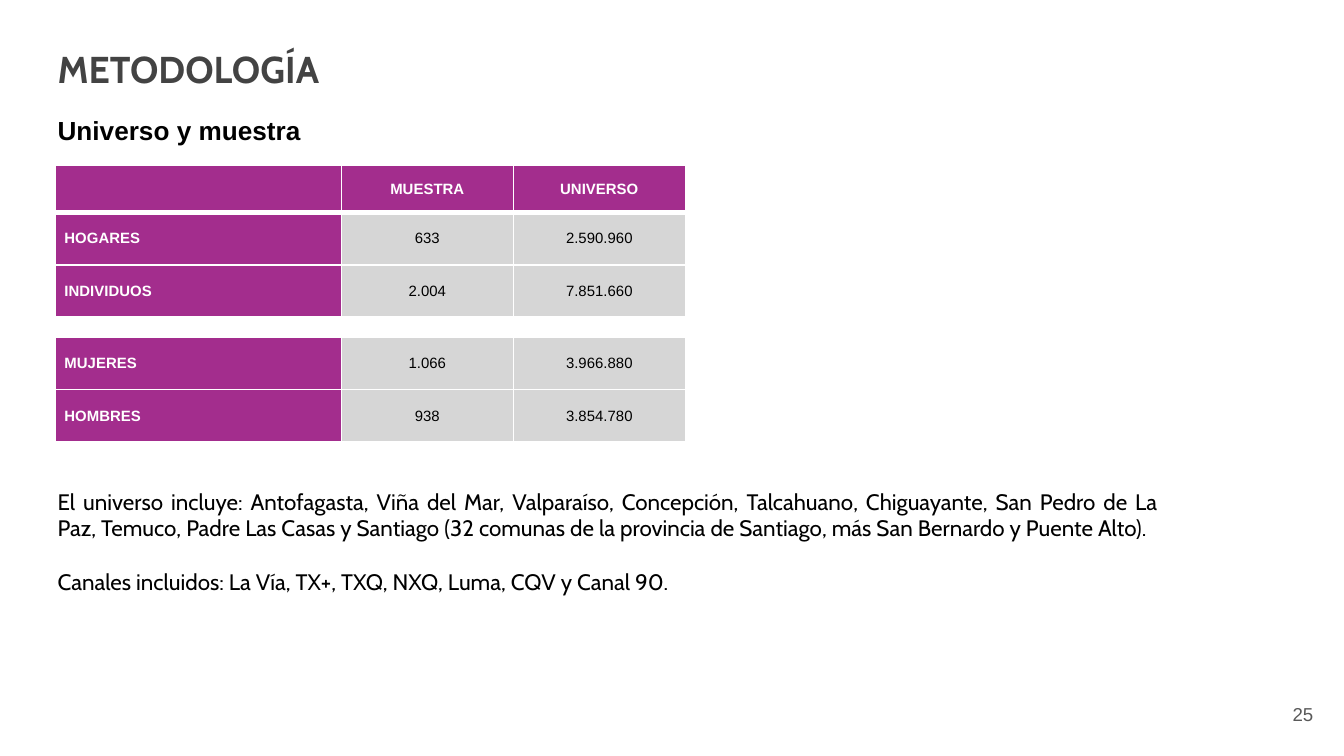
import pptx
import pptx.dml.color
import pptx.enum.text
import pptx.oxml.ns
import pptx.util
from lxml import etree
from pptx.util import Inches

COLORS = {
    "purple": "A32D8D",
    "gray": "D6D6D6",
    "white": "FFFFFF",
    "black": "000000",
    "title": "434343",
    "number": "595959",
}
ALIGN = pptx.enum.text.PP_ALIGN
ANCHOR = pptx.enum.text.MSO_ANCHOR
HEADING = {"name": "Cabin", "size": 20, "bold": True, "color": "title"}
SUBHEADING = {"name": "Arial", "size": 14, "bold": True, "color": "black"}
BODY = {"name": "Cabin", "size": 12, "bold": False, "color": "black"}
NUMBER = {"name": "Arial", "size": 10, "bold": False, "color": "number"}
LABEL = {"name": "Arial", "size": 8, "bold": True, "color": "white"}
VALUE = {"name": "Arial", "size": 8, "bold": False, "color": "black"}

COLUMN_WIDTHS = [2.13, 1.28, 1.28]
HEADER_HEIGHT, ROW_HEIGHT, GAP_HEIGHT = 0.35, 0.39, 0.15
GAP_ROW = ["", "", ""]
ROWS = [
    ["", "MUESTRA", "UNIVERSO"],
    ["HOGARES", "633", "2.590.960"],
    ["INDIVIDUOS", "2.004", "7.851.660"],
    GAP_ROW,
    ["MUJERES", "1.066", "3.966.880"],
    ["HOMBRES", "938", "3.854.780"],
    GAP_ROW,
]
NOTES = [
    "El universo incluye: Antofagasta, Viña del Mar, Valparaíso, Concepción, "
    "Talcahuano, Chiguayante, San Pedro de La Paz, Temuco, Padre Las Casas y "
    "Santiago (32 comunas de la provincia de Santiago, más San Bernardo y Puente Alto).",
    "Canales incluidos: La Vía, TX+, TXQ, NXQ, Luma, CQV y Canal 90.",
]


def rgb(name):
    return pptx.dml.color.RGBColor.from_string(COLORS[name])


def write_span(paragraph, text, style):
    span = paragraph.add_run()
    span.text = text
    for key, value in style.items():
        if key == "color":
            span.font.color.rgb = rgb(value)
        else:
            setattr(span.font, key, pptx.util.Pt(value) if key == "size" else value)


def add_text(page, place, texts, style, align=ALIGN.LEFT, gap=0, **frame_format):
    box = page.shapes.add_textbox(*map(Inches, place))
    frame = box.text_frame
    for key, value in ({"word_wrap": True} | frame_format).items():
        setattr(frame, key, value)
    for index, text in enumerate(texts):
        paragraph = frame.add_paragraph() if index else frame.paragraphs[0]
        paragraph.alignment = align
        if index:
            paragraph.space_before = pptx.util.Pt(gap)
        write_span(paragraph, text, style)


def add_borders(cell, bottom):
    properties = cell._tc.get_or_add_tcPr()
    for side, width in {"L": 1, "R": 1, "T": 1, "B": bottom}.items():
        line = etree.SubElement(
            properties, pptx.oxml.ns.qn(f"a:ln{side}"), w=str(pptx.util.Pt(width))
        )
        fill = etree.SubElement(line, pptx.oxml.ns.qn("a:solidFill"))
        etree.SubElement(fill, pptx.oxml.ns.qn("a:srgbClr"), val=COLORS["white"])


def format_cell(cell, text, is_header, is_label, is_gap):
    cell_format = {
        "margin_left": Inches(0.07),
        "margin_right": Inches(0.07),
        "margin_top": 0,
        "margin_bottom": 0,
        "vertical_anchor": ANCHOR.MIDDLE,
    }
    for key, value in cell_format.items():
        setattr(cell, key, value)
    add_borders(cell, 3 if is_header else 1)
    is_purple = is_header or is_label
    if is_gap:
        cell.fill.background()
    else:
        cell.fill.solid()
        cell.fill.fore_color.rgb = rgb("purple" if is_purple else "gray")
    paragraph = cell.text_frame.paragraphs[0]
    if text:
        paragraph.alignment = ALIGN.LEFT if is_label else ALIGN.CENTER
        write_span(paragraph, text, LABEL if is_purple else VALUE)
    else:
        etree.SubElement(paragraph._p, pptx.oxml.ns.qn("a:endParaRPr"), sz="800")


def add_sample_table(page):
    heights = [HEADER_HEIGHT] + [
        GAP_HEIGHT if row is GAP_ROW else ROW_HEIGHT for row in ROWS[1:]
    ]
    place = (0.41, 1.23, sum(COLUMN_WIDTHS), sum(heights))
    table = page.shapes.add_table(
        len(ROWS), len(COLUMN_WIDTHS), *map(Inches, place)
    ).table
    table.first_row = table.horz_banding = False
    for column, width in zip(table.columns, COLUMN_WIDTHS):
        column.width = Inches(width)
    for row_index, (texts, height) in enumerate(zip(ROWS, heights)):
        table.rows[row_index].height = Inches(height)
        for column_index, text in enumerate(texts):
            format_cell(
                table.cell(row_index, column_index), text,
                row_index == 0, column_index == 0, texts is GAP_ROW,
            )


def main():
    deck = pptx.Presentation()
    deck.slide_width = Inches(10)
    deck.slide_height = deck.slide_width * 9 // 16
    page = deck.slides.add_slide(deck.slide_layouts[6])
    inset = {"margin_top": Inches(0.1), "margin_bottom": Inches(0.1)}
    add_text(page, (9.27, 5.1, 0.6, 0.43), ["25"], NUMBER, ALIGN.RIGHT,
             vertical_anchor=ANCHOR.MIDDLE, **inset)
    add_text(page, (0.33, 0.8, 2.02, 0.34), ["Universo y muestra"], SUBHEADING,
             word_wrap=False)
    add_sample_table(page)
    add_text(page, (0.33, 3.58, 8.39, 1.11), NOTES, BODY, ALIGN.JUSTIFY, gap=14.5)
    add_text(page, (0.33, 0.24, 8.81, 0.63), ["METODOLOGÍA"], HEADING, **inset)
    deck.save("out.pptx")


if __name__ == "__main__":
    main()
